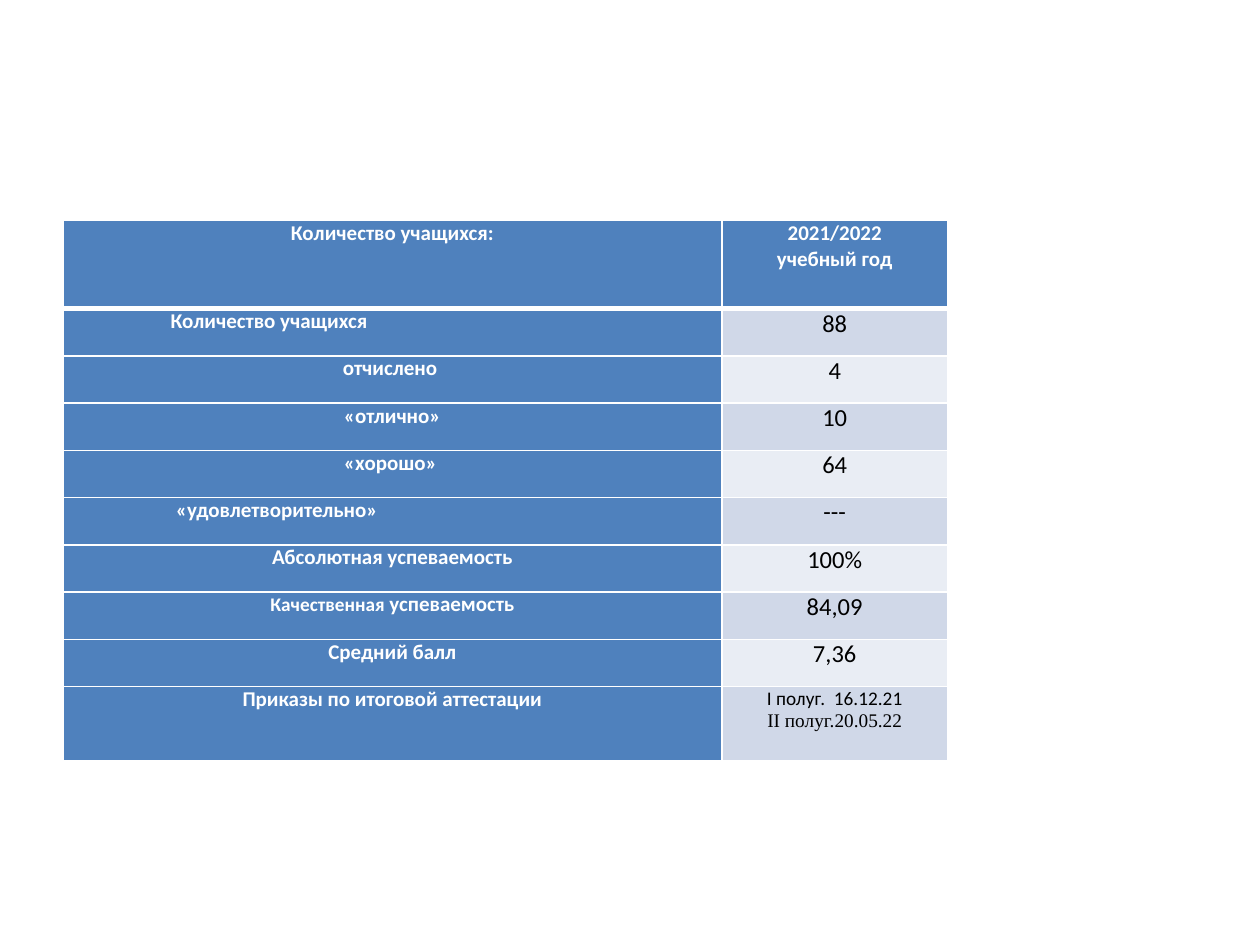
from lxml.etree import SubElement
from pptx import Presentation
from pptx.dml.color import RGBColor
from pptx.enum.text import PP_ALIGN
from pptx.oxml.ns import qn
from pptx.util import Pt

COLORS = {"label": "4F81BD", "odd": "D0D8E8", "even": "E9EDF4",
          "white": "FFFFFF", "black": "000000"}
FONT = "Calibri"
SERIF = "Times New Roman"
COLUMN_WIDTHS = (376.5, 129)
HEADER_HEIGHT, ROW_HEIGHT, ORDERS_HEIGHT = 50.4, 27, 42.4

# Label spans as (text, size), left indent (None means centred), value
RESULTS = [
    ([("Количество учащихся", 12)], 56.5, "88"),
    ([("отчислено ", 12)], None, "4"),
    ([(" «отлично» ", 12)], None, "10"),
    ([("«хорошо»", 12), (" ", 10)], None, "64"),
    ([("«удовлетворительно»", 12)], 59.5, "---"),
    ([("Абсолютная успеваемость", 12)], None, "100%"),
    ([("Качественная ", 11), ("успеваемость", 12)], None, "84,09"),
    ([("Средний балл", 12)], None, "7,36"),
]


class SlideBuilder:
    def __init__(self, page):
        self.page = page

    def table(self, left, top, widths, heights):
        frame = self.page.shapes.add_table(
            len(heights), len(widths), Pt(left), Pt(top),
            Pt(sum(widths)), Pt(sum(heights)))
        table = frame.table
        table.first_row = table.horz_banding = False
        for column, width in zip(table.columns, widths):
            column.width = Pt(width)
        for row, height in zip(table.rows, heights):
            row.height = Pt(height)
        return table

    def borders(self, cell, top, bottom):
        properties = cell._tc.get_or_add_tcPr()
        for side, width in (("L", 1), ("R", 1), ("T", top), ("B", bottom)):
            line = SubElement(properties, qn(f"a:ln{side}"), w=str(Pt(width)))
            fill = SubElement(line, qn("a:solidFill"))
            SubElement(fill, qn("a:srgbClr"), val=COLORS["white"])

    def cell(self, cell, paragraphs, fill, color, bold=False, indent=None,
             top=1, bottom=1):
        """Fill a cell; each paragraph is a list of (text, size[, font]) spans."""
        self.borders(cell, top, bottom)
        cell.fill.solid()
        cell.fill.fore_color.rgb = RGBColor.from_string(COLORS[fill])
        cell.margin_left = cell.margin_right = Pt(5)
        cell.margin_top = cell.margin_bottom = Pt(0)
        frame = cell.text_frame
        for index, spans in enumerate(paragraphs):
            para = frame.add_paragraph() if index else frame.paragraphs[0]
            if indent is None:
                para.alignment = PP_ALIGN.CENTER
            else:
                para.alignment = PP_ALIGN.LEFT
                para._p.get_or_add_pPr().set("marL", str(Pt(indent)))
            for text, size, *font in spans:
                span = para.add_run()
                span.text = text
                span.font.size = Pt(size)
                span.font.name = font[0] if font else FONT
                span.font.bold = bold
                span.font.color.rgb = RGBColor.from_string(COLORS[color])

    def label(self, cell, paragraphs, **options):
        self.cell(cell, paragraphs, "label", "white", bold=True, **options)

    def value(self, cell, paragraphs, row):
        self.cell(cell, paragraphs, "odd" if row % 2 else "even", "black",
                  top=3 if row == 1 else 1)


def main():
    deck = Presentation()
    deck.slide_width, deck.slide_height = Pt(720), Pt(540)
    builder = SlideBuilder(deck.slides.add_slide(deck.slide_layouts[6]))

    heights = [HEADER_HEIGHT] + [ROW_HEIGHT] * len(RESULTS) + [ORDERS_HEIGHT]
    table = builder.table(36, 126, COLUMN_WIDTHS, heights)

    builder.label(table.cell(0, 0), [[("Количество учащихся:", 12)]], bottom=3)
    builder.label(table.cell(0, 1),
                  [[("2021/2022", 12)], [("учебный год", 12)]], bottom=3)

    for row, (spans, indent, value) in enumerate(RESULTS, start=1):
        builder.label(table.cell(row, 0), [spans], indent=indent,
                      top=3 if row == 1 else 1)
        builder.value(table.cell(row, 1), [[(value, 14)]], row)

    orders = len(RESULTS) + 1
    builder.label(table.cell(orders, 0),
                  [[("Приказы по итоговой аттестации", 12)]])
    builder.value(table.cell(orders, 1),
                  [[("I полуг.  16.12.21", 11)],
                   [("II полуг.20.05.22", 11, SERIF)]], orders)

    deck.save("out.pptx")


if __name__ == "__main__":
    main()
